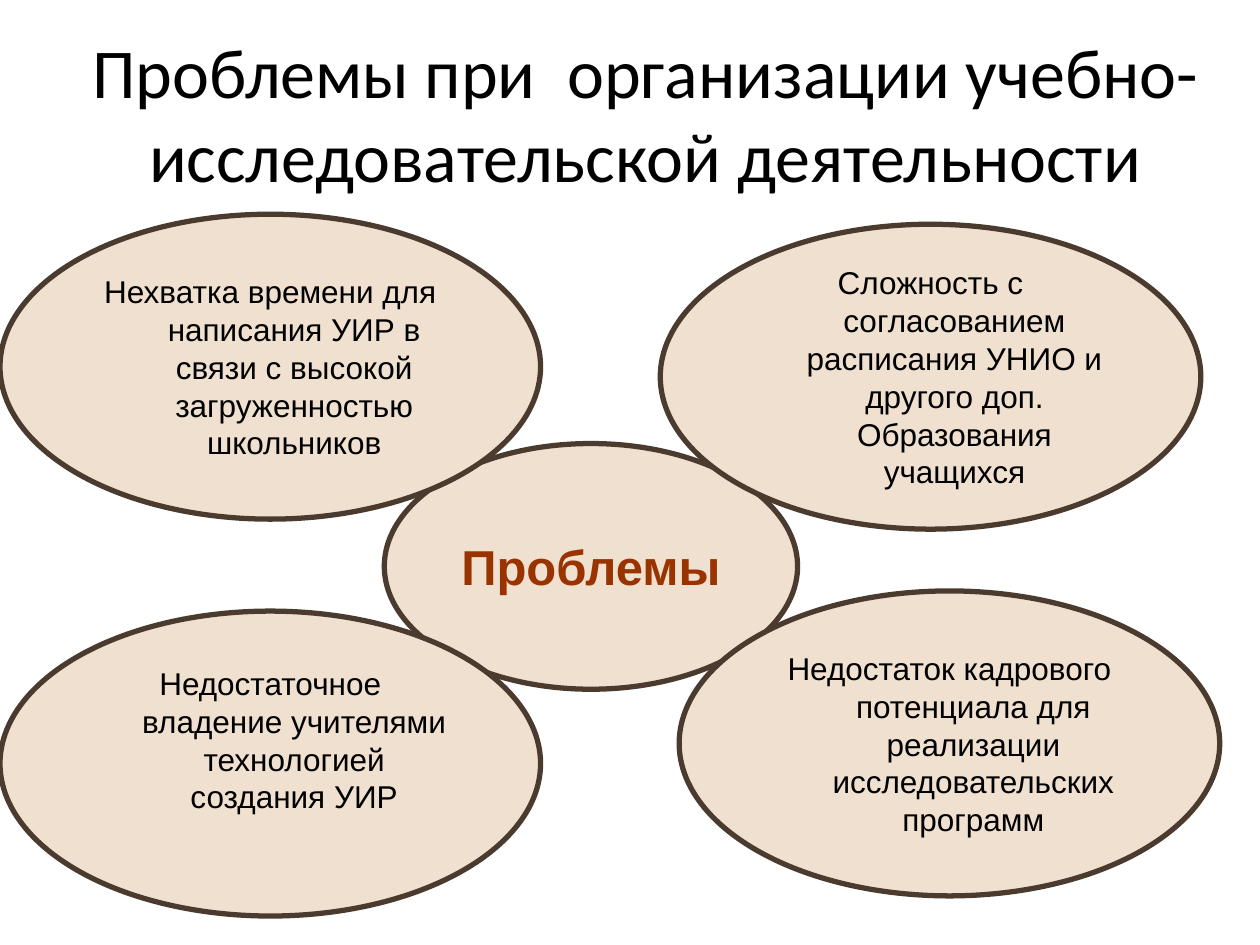
from lxml.etree import SubElement
from pptx import Presentation
from pptx.dml.color import RGBColor
from pptx.enum.shapes import MSO_SHAPE as Shape
from pptx.enum.text import MSO_ANCHOR as Anchor, PP_ALIGN as Align
from pptx.oxml.ns import qn
from pptx.util import Inches, Pt

PROBLEM_SIZE = (4.29, 2.42)
PROBLEMS = [
    (0, 1.7, "Нехватка времени для написания УИР в связи с высокой загруженностью школьников", 0.05),
    (5.24, 1.78, "Сложность с согласованием расписания УНИО и другого доп. Образования учащихся", 0.05),
    (0, 4.85, "Недостаточное владение учителями технологией создания УИР", 0.43),
    (5.39, 4.69, "Недостаток кадрового потенциала для реализации исследовательских программ", 0.05),
]


def color(value):
    """Return the colour for a hex string."""
    return RGBColor.from_string(value)


def set_text(shape, text, size, font_name="Arial", font_color="000000", bold=False):
    """Fill a shape with centred, wrapped text."""
    frame = shape.text_frame
    frame.word_wrap = True
    frame.vertical_anchor = Anchor.MIDDLE
    frame.text = text
    paragraph = frame.paragraphs[0]
    paragraph.alignment = Align.CENTER
    font = paragraph.runs[0].font
    font.name, font.size, font.bold = font_name, Pt(size), bold
    font.color.rgb = color(font_color)


def set_hanging_indent(shape, indent):
    """Give the first paragraph of a shape a hanging indent."""
    properties = shape.text_frame.paragraphs[0]._p.get_or_add_pPr()
    properties.set("marL", str(Inches(indent)))
    properties.set("indent", str(-Inches(indent)))


def add_title(slide, text):
    """Add the heading on its translucent white panel."""
    title = slide.shapes.add_textbox(Inches(0.55), Inches(0.23), Inches(9.14), Inches(1.32))
    title.fill.solid()
    title.fill.fore_color.rgb = color("FFFFFF")
    fill_color = title._element.spPr.find(qn("a:solidFill")).find(qn("a:srgbClr"))
    SubElement(fill_color, qn("a:alpha")).set("val", "80000")
    title.line.color.rgb = color("FFFFFF")
    title.line.width = Pt(0.75)
    set_text(title, text, 40, "Calibri")


def add_ellipse(slide, left, top, width, height):
    """Add a beige ellipse with a brown outline."""
    ellipse = slide.shapes.add_shape(
        Shape.OVAL, Inches(left), Inches(top), Inches(width), Inches(height))
    ellipse.shadow.inherit = False
    ellipse.fill.solid()
    ellipse.fill.fore_color.rgb = color("F0E0D0")
    ellipse.line.color.rgb = color("4B3B2F")
    ellipse.line.width = Pt(3)
    return ellipse


def add_problem(slide, left, top, text, bottom_margin):
    """Add one of the outer ellipses with its problem."""
    ellipse = add_ellipse(slide, left, top, *PROBLEM_SIZE)
    set_text(ellipse, text, 18)
    set_hanging_indent(ellipse, 0.38)
    ellipse.text_frame.margin_bottom = Inches(bottom_margin)


def main():
    """Build and save the slide."""
    presentation = Presentation()
    presentation.slide_width, presentation.slide_height = Inches(10), Inches(7.5)
    slide = presentation.slides.add_slide(presentation.slide_layouts[6])
    add_title(slide, "Проблемы при  организации учебно-исследовательской деятельности")
    center = add_ellipse(slide, 3.05, 3.52, 3.28, 1.95)
    set_text(center, "Проблемы", 28, font_color="993300", bold=True)
    for problem in PROBLEMS:
        add_problem(slide, *problem)
    presentation.save("out.pptx")


if __name__ == "__main__":
    main()
